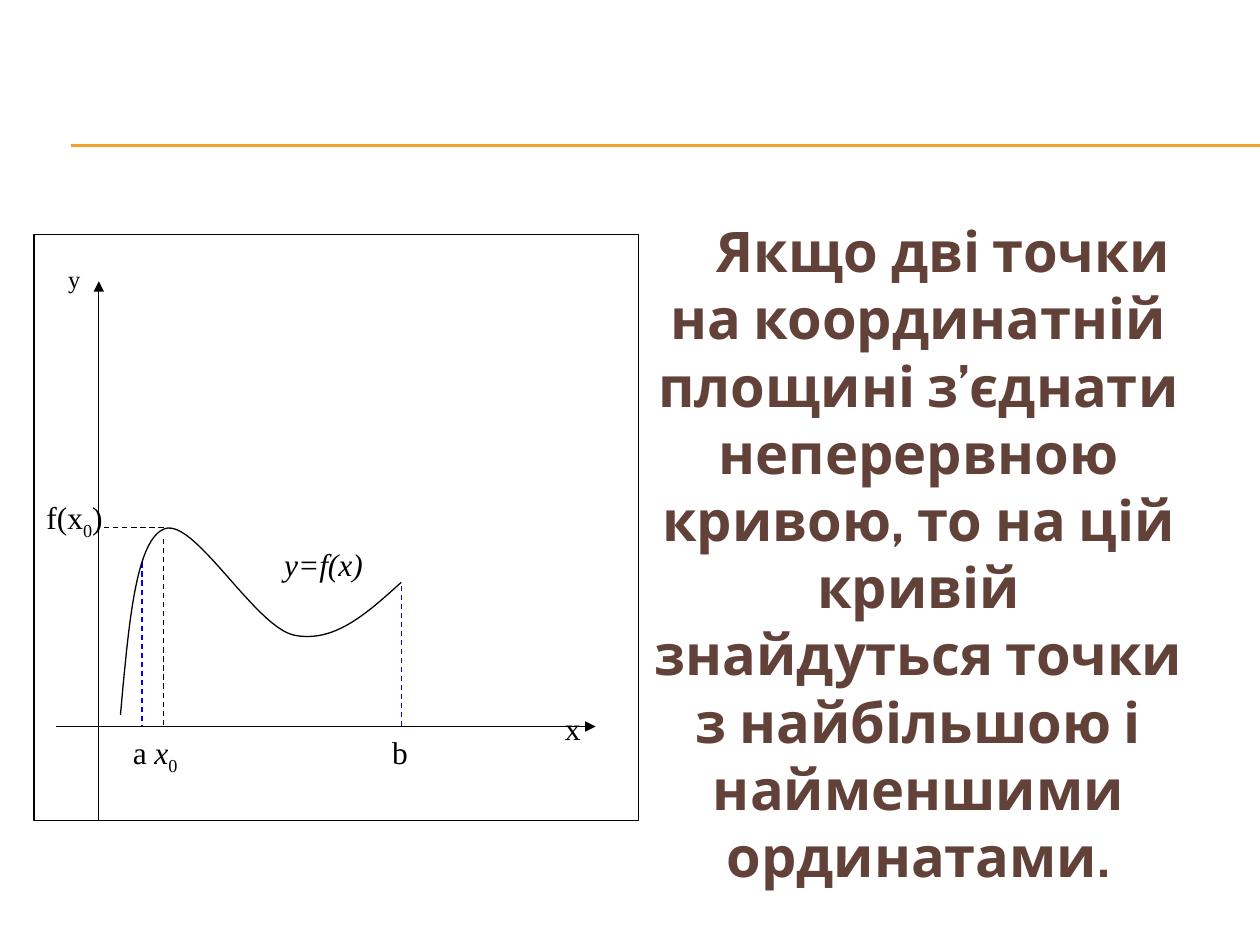
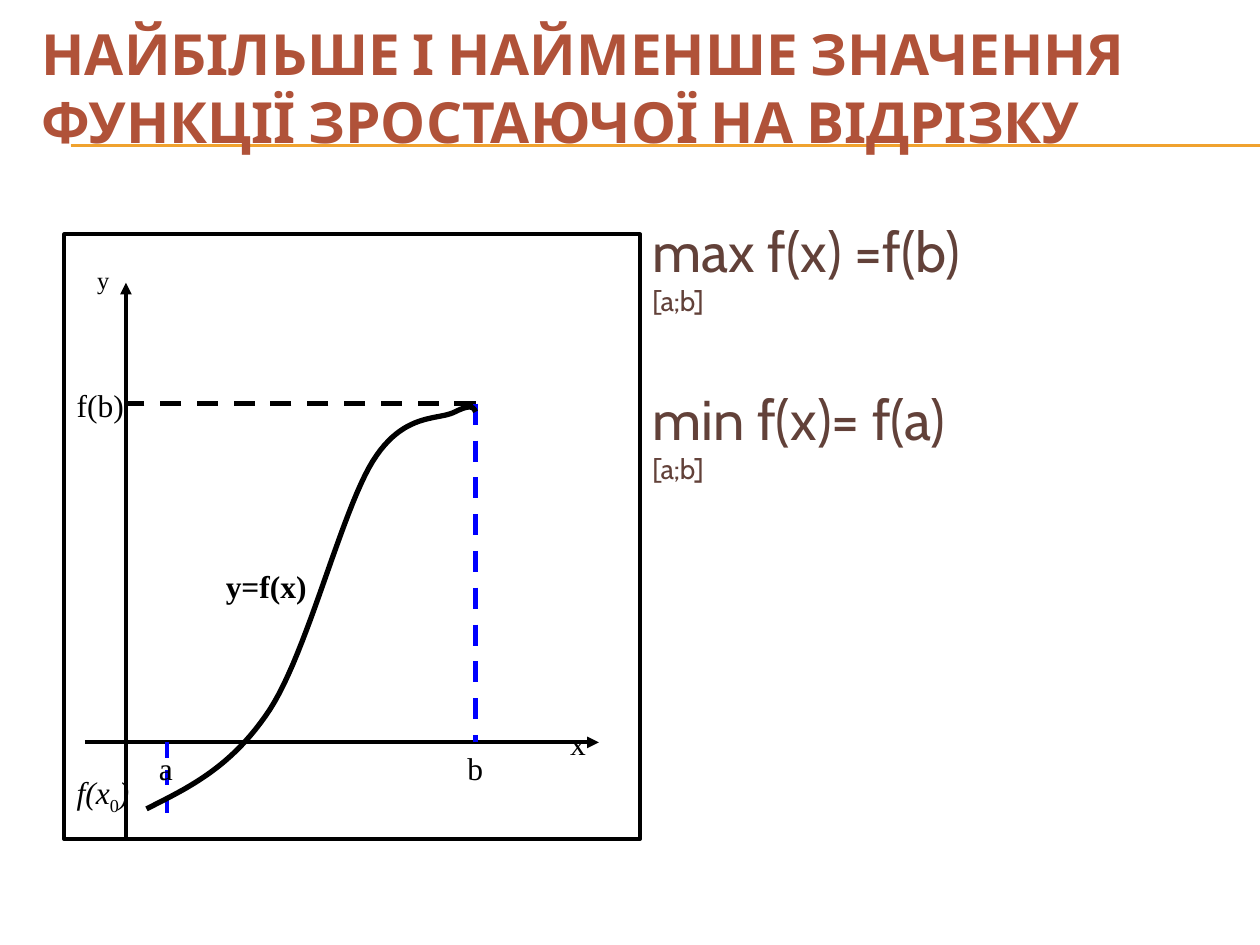
"""Builds two slides on the greatest and least values of a continuous function."""
from dataclasses import dataclass

from lxml.etree import SubElement
from pptx import Presentation
from pptx.dml.color import RGBColor
from pptx.enum.dml import MSO_LINE_DASH_STYLE as Dash
from pptx.enum.shapes import MSO_CONNECTOR as Conn, MSO_SHAPE as Shape
from pptx.enum.text import MSO_ANCHOR as Anchor, MSO_AUTO_SIZE as AutoSize, PP_ALIGN as Align
from pptx.oxml.ns import qn
from pptx.util import Inches, Pt

GOLD = RGBColor(0xF0, 0xA2, 0x2E)
BROWN = RGBColor(0x62, 0x41, 0x39)
RUST = RGBColor(0xB0, 0x52, 0x39)
BLACK = RGBColor(0, 0, 0)
BLUE = RGBColor(0, 0, 0xFF)

TEXT_FONT, MATH_FONT = "Cabin", "Times New Roman"
BODY_BOX = (5.08, 1.67, 4.42, 5)
COLS, ROWS = 28, 25
X_AXIS_ROW, Y_AXIS_COL = 21, 3
STEPS = 24

Point = tuple[float, float]


@dataclass
class Grid:
    """A plot frame in inches, divided into COLS by ROWS cells."""
    left: float
    top: float
    width: float
    height: float

    def at(self, col: float, row: float) -> tuple[int, int]:
        """Return the slide position of a grid point."""
        return (Inches(self.left + col * self.width / COLS),
                Inches(self.top + row * self.height / ROWS))

    def size(self, cols: float, rows: float) -> tuple[int, int]:
        """Return the size of a block of cells."""
        return Inches(cols * self.width / COLS), Inches(rows * self.height / ROWS)


@dataclass
class Guide:
    """A dashed guide line between two grid points."""
    start: Point
    end: Point
    color: RGBColor
    weight: float


@dataclass
class Label:
    """A plot label, with subscripts set between underscores."""
    text: str
    col: float
    row: float
    cols: float = 2
    rows: float = 3
    size: float = 18
    italic: bool = False
    bold: bool = False


@dataclass
class Plot:
    """A function graph with its frame, guides, labels and Bezier points."""
    grid: Grid
    weight: float
    curve_weight: float
    curve: list[Point]
    guides: list[Guide]
    labels: list[Label]


AXIS_LABELS = [Label("y", 1, 1, size=14), Label("x", 24, 20), Label("a", 4, 21, rows=2)]

CONTINUOUS = Plot(
    Grid(0.27, 1.86, 4.8, 4.65), 0.75, 0.75,
    [(4, 20.5), (4.37, 16.83), (4.67, 13.12), (6, 12.58), (7.35, 11.99),
     (10.2, 16.72), (12.02, 17.1), (13.9, 17.47), (15.46, 16.13), (17, 14.85)],
    [Guide((6, 12.5), (3, 12.5), BLACK, 0.75), Guide((6, 13), (6, 21), BLACK, 0.75),
     Guide((5, 14), (5, 21), BLUE, 0.75), Guide((17, 15), (17, 21), BLUE, 0.75)],
    [Label("b", 16, 21, rows=2), Label("x_0_", 5, 21, 3, italic=True),
     Label("f(x_0_)", 0, 11, 4), Label("y=f(x)", 11, 13, 6, italic=True)])

INCREASING = Plot(
    Grid(0.51, 1.86, 4.57, 4.8), 2.25, 3,
    [(4, 23.75), (6.07, 22.86), (8.15, 22.03), (10, 19.64), (11.83, 17.24),
     (13.48, 11.46), (15, 9.38), (16.5, 7.34), (18.14, 7.71), (19, 7.34),
     (19.85, 6.98), (19.91, 7.19), (20, 7.34)],
    [Guide((20, 7), (3, 7), BLACK, 3), Guide((5, 21), (5, 24), BLUE, 2.25),
     Guide((20, 7), (20, 21), BLUE, 3)],
    [Label("b", 19, 21, rows=2), Label("f(x_0_)", 0, 22, 4, italic=True),
     Label("f(b)", 0, 6, 4), Label("y=f(x)", 7.25, 13.5, 7.75, 2, bold=True)])


def add_line(shapes, start, end, color: RGBColor, weight: float, dash=None, arrow=False):
    """Draw a plain, dashed or arrowed straight line."""
    line = shapes.add_connector(Conn.STRAIGHT, *start, *end)
    line.line.color.rgb = color
    line.line.width = Pt(weight)
    if dash:
        line.line.dash_style = dash
    if arrow:
        SubElement(line.line._get_or_add_ln(), qn("a:tailEnd"), type="triangle")
    SubElement(line.element.spPr, qn("a:effectLst"))
    return line


def style_outline(sp, weight: float) -> None:
    """Give a shape a black outline only."""
    sp.shadow.inherit = False
    sp.fill.background()
    sp.line.color.rgb = BLACK
    sp.line.width = Pt(weight)


def style_run(r, font: str, size: float, color: RGBColor, bold=False, italic=False) -> None:
    """Set the look of one run."""
    r.font.name, r.font.size = font, Pt(size)
    r.font.bold, r.font.italic = bold, italic
    r.font.color.rgb = color


def bezier_points(points: list[Point]) -> list[Point]:
    """Sample a chain of cubic Bezier segments."""
    sampled = [points[0]]
    for i in range(0, len(points) - 1, 3):
        segment = points[i:i + 4]
        for step in range(1, STEPS + 1):
            t = step / STEPS
            weights = ((1 - t) ** 3, 3 * t * (1 - t) ** 2, 3 * t * t * (1 - t), t ** 3)
            sampled.append((sum(w * x for w, (x, _) in zip(weights, segment)),
                            sum(w * y for w, (_, y) in zip(weights, segment))))
    return sampled


def add_label(shapes, grid: Grid, label: Label) -> None:
    """Write one label on the plot grid."""
    box = shapes.add_textbox(*grid.at(label.col, label.row), *grid.size(label.cols, label.rows))
    tf = box.text_frame
    tf.word_wrap = True
    for i, part in enumerate(label.text.split("_")):
        if not part:
            continue
        r = tf.paragraphs[0].add_run()
        r.text = part
        subscript = i % 2 == 1
        style_run(r, MATH_FONT, label.size, BLACK, label.bold, label.italic and not subscript)
        if subscript:
            r.font._element.set("baseline", "-25000")


def add_plot(s, plot: Plot) -> None:
    """Draw a framed function graph as one group."""
    shapes, grid = s.shapes.add_group_shape().shapes, plot.grid
    frame = shapes.add_shape(Shape.RECTANGLE, *grid.at(0, 0), *grid.size(COLS, ROWS))
    style_outline(frame, plot.weight)
    for start, end in (((Y_AXIS_COL, ROWS), (Y_AXIS_COL, 2)),
                       ((1, X_AXIS_ROW), (26, X_AXIS_ROW))):
        add_line(shapes, grid.at(*start), grid.at(*end), BLACK, plot.weight, arrow=True)
    for guide in plot.guides:
        add_line(shapes, grid.at(*guide.start), grid.at(*guide.end),
                 guide.color, guide.weight, Dash.DASH)
    first, *rest = [grid.at(*point) for point in bezier_points(plot.curve)]
    builder = shapes.build_freeform(*first)
    builder.add_line_segments(rest, close=False)
    style_outline(builder.convert_to_shape(), plot.curve_weight)
    for label in AXIS_LABELS + plot.labels:
        add_label(shapes, grid, label)


def add_body(s, lines: list[tuple[str, float]], bold=False):
    """Add the text column and return its paragraphs."""
    tf = s.shapes.add_textbox(*map(Inches, BODY_BOX)).text_frame
    tf.word_wrap = True
    tf.text = "\n".join(text for text, _ in lines)
    for p, (_, size) in zip(tf.paragraphs, lines):
        style_run(p.runs[0], TEXT_FONT, size, BROWN, bold)
    return tf.paragraphs


def set_title(s, text: str) -> None:
    """Place and format the slide title."""
    title = s.shapes.title
    title.left, title.top, title.width, title.height = map(Inches, (0.23, 0.23, 9.5, 0.92))
    tf = title.text_frame
    tf.text = text
    tf.word_wrap, tf.auto_size, tf.vertical_anchor = True, AutoSize.NONE, Anchor.MIDDLE
    p = tf.paragraphs[0]
    p.alignment = Align.LEFT
    style_run(p.runs[0], TEXT_FONT, 32.4, RUST, bold=True)


def add_master_rules(prs, s) -> None:
    """Put the double gold rule on the slide master."""
    for number, y in enumerate((1.15, 1.16)):
        rule = add_line(s.shapes, (Inches(0.56), Inches(y)), (prs.slide_width, Inches(y)),
                        GOLD, 0.75)
        rule.element.nvCxnSpPr.cNvPr.id = 20 + number
        prs.slide_master.shapes.element.append(rule.element)


def main() -> None:
    """Build and save the presentation."""
    prs = Presentation()
    prs.slide_width, prs.slide_height = Inches(10), Inches(7.5)
    title_only, blank = prs.slide_layouts[5], prs.slide_layouts[6]

    s = prs.slides.add_slide(blank)
    add_master_rules(prs, s)
    p = add_body(s, [("Якщо дві точки на координатній площині з’єднати неперервною кривою, "
                      "то на цій кривій знайдуться точки з найбільшою і найменшими "
                      "ординатами.", 32)], bold=True)[0]
    p.alignment = Align.CENTER
    p._p.get_or_add_pPr().set("indent", str(Inches(0.39)))
    add_plot(s, CONTINUOUS)

    s = prs.slides.add_slide(title_only)
    set_title(s, "НАЙБІЛЬШЕ І НАЙМЕНШЕ ЗНАЧЕННЯ ФУНКЦІЇ ЗРОСТАЮЧОЇ НА ВІДРІЗКУ")
    paragraphs = add_body(s, [("max f(x) =f(b)", 32), ("[a;b]", 16),
                              ("min f(x)= f(a)", 32), ("[a;b]", 16)])
    paragraphs[2].space_before = Pt(38.4)
    add_plot(s, INCREASING)

    prs.save("out.pptx")


if __name__ == "__main__":
    main()
